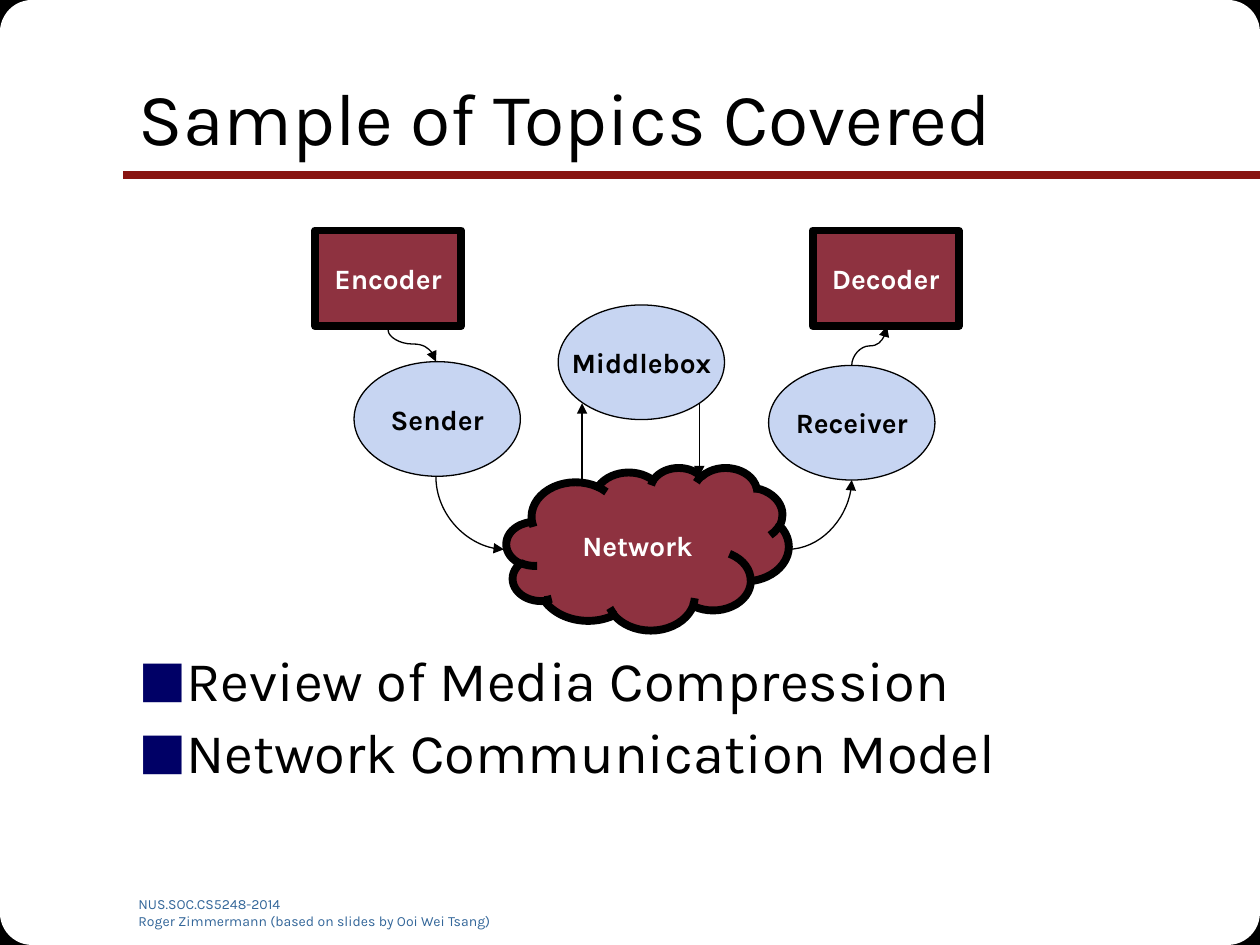
"""Build the course topics slide with its streaming diagram."""
from dataclasses import dataclass

from lxml import etree
from pptx import Presentation, util as u
from pptx.dml.color import RGBColor
from pptx.enum import shapes as es, text as et
from pptx.oxml.ns import qn


@dataclass(frozen=True)
class Theme:
    """Colours, type sizes and line widths."""
    font: str = "Karla"
    ink: str = "000000"
    paper: str = "FFFFFF"
    red: str = "8E3240"
    rule: str = "891411"
    pale: str = "C7D5F2"
    foot: str = "336699"
    mark: str = "000066"
    head: int = 42
    body: int = 32
    label: int = 16
    small: int = 8
    thick: float = 4.5
    thin: float = 0.75


@dataclass(frozen=True)
class Box:
    """An area on a grid of 100 columns and 75 rows."""
    x: float
    y: float
    w: float
    h: float

    def area(self, x, y, w, h):
        """Return a box placed relative to this one."""
        return Box(self.x + x, self.y + y, w, h)

    def emu(self):
        """Return left, top, width and height for a shape."""
        return [cell(v) for v in (self.x, self.y, self.w, self.h)]


T = Theme()
KIND = es.MSO_SHAPE
WIRE = es.MSO_CONNECTOR


def cell(n):
    """Turn grid cells into a length."""
    return u.Inches(n / 10)


def rgb(code):
    """Turn a hex code into a colour."""
    return RGBColor.from_string(code)


def write(para, words, size, color, bold=False):
    """Add one styled run to a paragraph."""
    run = para.add_run()
    run.text = words
    font = run.font
    font.name, font.size, font.bold = T.font, u.Pt(size), bold
    font.color.rgb = rgb(color)


def place(shape, box):
    """Move a shape into a box."""
    shape.left, shape.top, shape.width, shape.height = box.emu()


def form(slide, kind, box, fill, width=0):
    """Add a filled preset shape with an optional outline."""
    shape = slide.shapes.add_shape(kind, *box.emu())
    shape.shadow.inherit = False
    shape.fill.solid()
    shape.fill.fore_color.rgb = rgb(fill)
    if width:
        shape.line.color.rgb = rgb(T.ink)
        shape.line.width = u.Pt(width)
    else:
        shape.line.fill.background()
    return shape


def node(slide, kind, box, words, fill, color, width, wrap=False):
    """Add a labelled diagram shape."""
    frame = form(slide, kind, box, fill, width).text_frame
    frame.word_wrap = wrap
    frame.vertical_anchor = et.MSO_ANCHOR.MIDDLE
    para = frame.paragraphs[0]
    para.alignment = et.PP_ALIGN.CENTER
    write(para, words, T.label, color, True)


def wire(slide, kind, start, end, color, width):
    """Add a plain connector between two grid points."""
    line = slide.shapes.add_connector(kind, *[cell(v) for v in start + end])
    line.line.color.rgb = rgb(color)
    line.line.width = u.Pt(width)
    etree.SubElement(line.element.spPr, qn("a:effectLst"))
    return line


def arrow(slide, kind, start, end):
    """Add a thin connector with an arrowhead at its end."""
    line = wire(slide, kind, start, end, T.ink, T.thin)
    etree.SubElement(line.element.spPr.find(qn("a:ln")), qn("a:tailEnd"), type="triangle")
    return line


def curve(slide, start, end, bend=None, upright=True):
    """Add a curved arrow, leaving upright or sideways, as an S or a quarter."""
    first, last = start, end
    if upright:
        (ax, ay), (bx, by) = start, end
        mx, my = (ax + bx) / 2, (ay + by) / 2
        dx, dy = (bx - ax) / 2, (by - ay) / 2
        first, last = (mx + dy, my - dx), (mx - dy, my + dx)
    line = arrow(slide, WIRE.CURVE, first, last)
    if upright:
        line.element.spPr.find(qn("a:xfrm")).set("rot", str(270 * 60000))
    shape = line.element.spPr.find(qn("a:prstGeom"))
    if bend is None:
        shape.set("prst", "curvedConnector2")
    else:
        guides = shape.find(qn("a:avLst"))
        if guides is None:
            guides = etree.SubElement(shape, qn("a:avLst"))
        etree.SubElement(guides, qn("a:gd"), name="adj1", fmla=f"val {round(bend * 100000)}")


def backdrop(slide, box):
    """Draw the rounded dark corners and the title rule."""
    for kind, w, h, fill, edge in ((KIND.RECTANGLE, 4.3, 4.4, T.ink, T.thin),
                                   (KIND.ROUNDED_RECTANGLE, 15.3, 15.3, T.paper, 0)):
        for x in (0, box.w - w):
            for y in (0, box.h - h):
                form(slide, kind, box.area(x, y, w, h), fill, edge)
    wire(slide, WIRE.STRAIGHT, (box.w, 13.9), (9.8, 13.9), T.rule, T.thick)


def footer(slide, box):
    """Write the course and author lines."""
    frame = slide.shapes.add_textbox(*box.emu()).text_frame
    frame.word_wrap = True
    write(frame.paragraphs[0], "NUS.SOC.CS5248-2014", T.small, T.foot)
    write(frame.add_paragraph(), "Roger Zimmermann (based on slides by Ooi Wei Tsang)",
          T.small, T.foot)


def front(slide, shape, box, anchor):
    """Bring a placeholder to the front, place it and return its frame."""
    slide.shapes.element.append(shape.element)
    place(shape, box)
    frame = shape.text_frame
    frame.word_wrap, frame.auto_size = True, et.MSO_AUTO_SIZE.NONE
    frame.vertical_anchor = anchor
    return frame


def title(slide, box, words):
    """Fill the title placeholder."""
    para = front(slide, slide.shapes.title, box, et.MSO_ANCHOR.MIDDLE).paragraphs[0]
    para.alignment = et.PP_ALIGN.LEFT
    write(para, words, T.head, T.ink)


def topics(slide, box, items):
    """Fill the body placeholder with a bulleted list below the diagram."""
    frame = front(slide, slide.placeholders[1], box, et.MSO_ANCHOR.TOP)
    frame.margin_top = cell(34.3)
    for i, words in enumerate(items):
        para = frame.add_paragraph() if i else frame.paragraphs[0]
        para.line_spacing, para.space_before = 0.9, u.Pt(7)
        props = para._p.get_or_add_pPr()
        props.set("marL", str(cell(3.75)))
        props.set("indent", str(-cell(3.75)))
        tint = etree.SubElement(props, qn("a:buClr"))
        etree.SubElement(tint, qn("a:srgbClr"), val=T.mark)
        etree.SubElement(props, qn("a:buSzPct"), val="90000")
        etree.SubElement(props, qn("a:buFont"), typeface=T.font)
        etree.SubElement(props, qn("a:buChar"), char="■")
        write(para, words, T.body, T.ink)


def diagram(slide, box):
    """Draw the media path from encoder to decoder."""
    node(slide, KIND.CLOUD, box.area(15.2, 18.8, 22.4, 12.9), "Network",
         T.red, T.paper, T.thick, True)
    for words, x in (("Encoder", 0), ("Decoder", 39.5)):
        node(slide, KIND.RECTANGLE, box.area(x, 0, 11.6, 7.6), words, T.red, T.paper, T.thick)
    for words, x, y in (("Sender", 3.1, 10.4), ("Middlebox", 19.3, 5.9), ("Receiver", 36, 10.7)):
        node(slide, KIND.OVAL, box.area(x, y, 13.2, 9.1), words, T.pale, T.ink, T.thin)

    def spot(x, y):
        """Return a grid point inside the diagram."""
        return box.x + x, box.y + y

    curve(slide, spot(5.8, 7.9), spot(9.6, 10.4), 0.44)
    curve(slide, spot(9.6, 19.5), spot(15, 25.3))
    curve(slide, spot(21.2, 19.9), spot(21.2, 13.7), 0.39)
    arrow(slide, WIRE.STRAIGHT, spot(30.5, 13.7), spot(30.5, 19.5))
    curve(slide, spot(37.5, 25.3), spot(42.6, 19.8), upright=False)
    curve(slide, spot(42.6, 10.7), spot(45.4, 7.6), 0.5)


def main():
    """Build and save the slide."""
    deck = Presentation()
    deck.slide_width, deck.slide_height = cell(100), cell(75)
    slide = deck.slides.add_slide(deck.slide_layouts[1])
    backdrop(slide, Box(0, 0, 100, 75))
    footer(slide, Box(10, 70.6, 30.8, 2.8))
    title(slide, Box(10, 3, 85, 12.5), "Sample of Topics Covered")
    topics(slide, Box(10, 17.5, 85, 49.5),
           ("Review of Media Compression", "Network Communication Model"))
    diagram(slide, Box(25, 18.3, 51.1, 31.7))
    deck.save("out.pptx")


if __name__ == "__main__":
    main()
